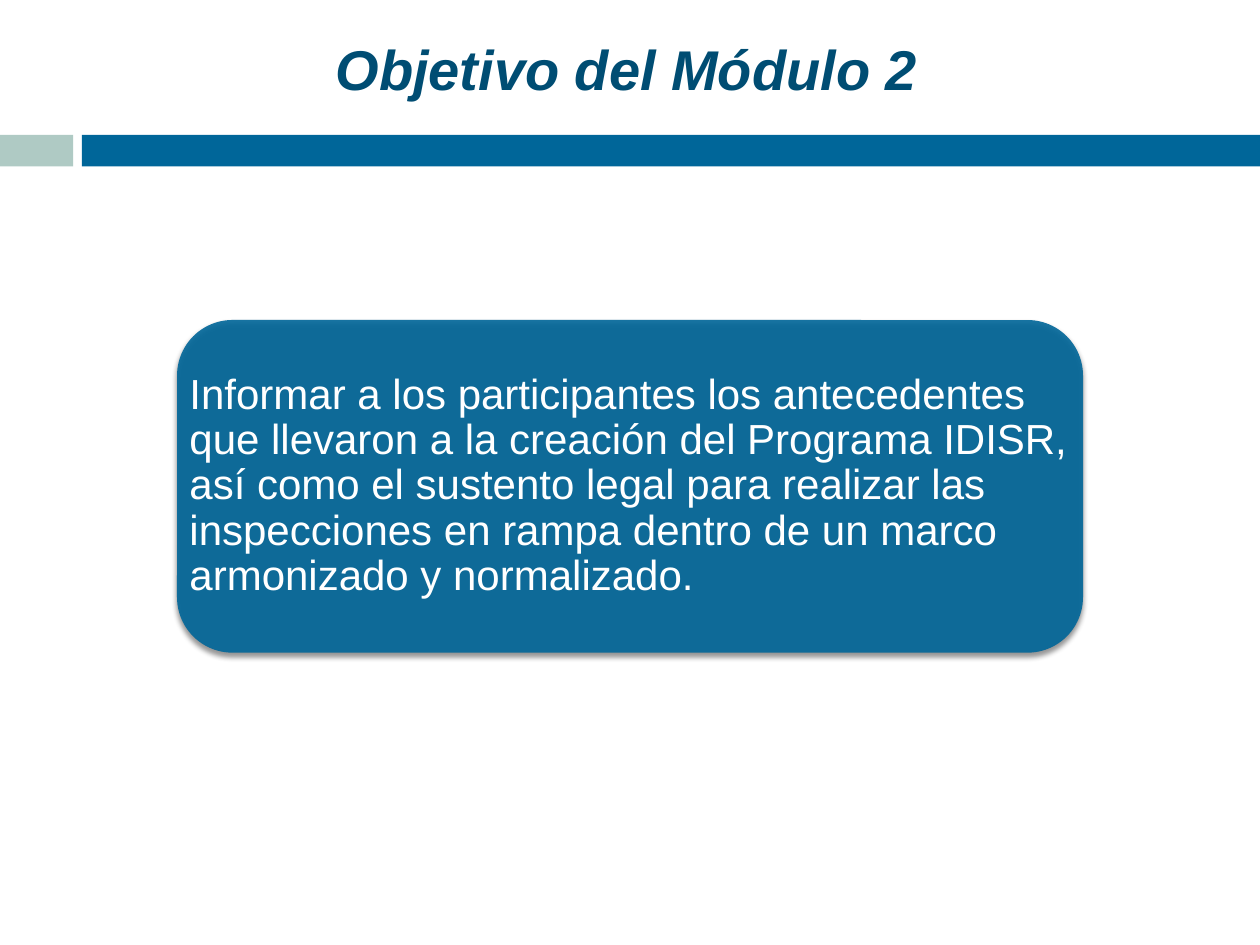
"""Build the slide that states the objective of module 2."""
from lxml.etree import SubElement
from pptx import Presentation
from pptx.dml.color import RGBColor
from pptx.enum.shapes import MSO_SHAPE
from pptx.enum.text import MSO_ANCHOR, PP_ALIGN
from pptx.oxml import parse_xml
from pptx.oxml.ns import nsdecls, qn
from pptx.util import Inches, Pt

COLORS = {"sage": "AFCAC4", "blue": "006699", "navy": "004D73", "white": "FFFFFF"}
WIDE, HIGH = 10, 7.5
BAND = {"top": 1.07, "height": 0.25}
SPLIT, GAP = 0.58, 0.07
CARD = {"width": 7.19, "height": 2.64}

deck = Presentation()
deck.slide_width, deck.slide_height = Inches(WIDE), Inches(HIGH)
slide = deck.slides.add_slide(deck.slide_layouts[6])


def block(kind, color, left, top, width, height):
    shape = slide.shapes.add_shape(kind, *map(Inches, (left, top, width, height)))
    shape.shadow.inherit = False
    shape.fill.solid()
    shape.fill.fore_color.rgb = RGBColor.from_string(COLORS[color])
    shape.line.fill.background()
    return shape


def write(shape, text, size, color, align=PP_ALIGN.LEFT, bold=False, italic=False, inset=0.1, spacing=1.0):
    frame = shape.text_frame
    frame.word_wrap = True
    frame.vertical_anchor = MSO_ANCHOR.MIDDLE
    frame.margin_left = frame.margin_right = Inches(inset)
    frame.margin_top = frame.margin_bottom = Inches(inset)
    line = frame.paragraphs[0]
    line.alignment, line.line_spacing = align, spacing
    run = line.add_run()
    run.text = text
    run.font.name, run.font.size = "Arial", Pt(size)
    run.font.bold, run.font.italic = bold, italic
    run.font.color.rgb = RGBColor.from_string(COLORS[color])


for color, left, right in (("sage", 0, SPLIT), ("blue", SPLIT + GAP, WIDE)):
    block(MSO_SHAPE.RECTANGLE, color, left, width=right - left, **BAND)

title = slide.shapes.add_textbox(*map(Inches, (0.27, 0.21, 9.41, 0.66)))
write(title, "Objetivo del Módulo 2", 32, "navy", align=PP_ALIGN.CENTER, bold=True, italic=True, inset=0.05)

card = block(MSO_SHAPE.ROUNDED_RECTANGLE, "blue", (WIDE - CARD["width"]) / 2, 2.54, **CARD)
props = card._element.spPr
tint = props.find(qn("a:solidFill")).find(qn("a:srgbClr"))
SubElement(tint, qn("a:alpha"), val="90000")
props.replace(props.find(qn("a:effectLst")), parse_xml(
    f'<a:effectLst {nsdecls("a")}><a:outerShdw blurRad="{Pt(3)}" dist="{Pt(2.4)}" dir="5400000" rotWithShape="0">'
    '<a:srgbClr val="000000"><a:alpha val="45000"/></a:srgbClr></a:outerShdw></a:effectLst>'))

label = slide.shapes.add_textbox(card.left, card.top, card.width, card.height)
write(label, "Informar a los participantes los antecedentes que llevaron a la creación del Programa IDISR, "
      "así como el sustento legal para realizar las inspecciones en rampa dentro de un marco "
      "armonizado y normalizado.", 24, "white", spacing=0.9)

deck.save("out.pptx")
